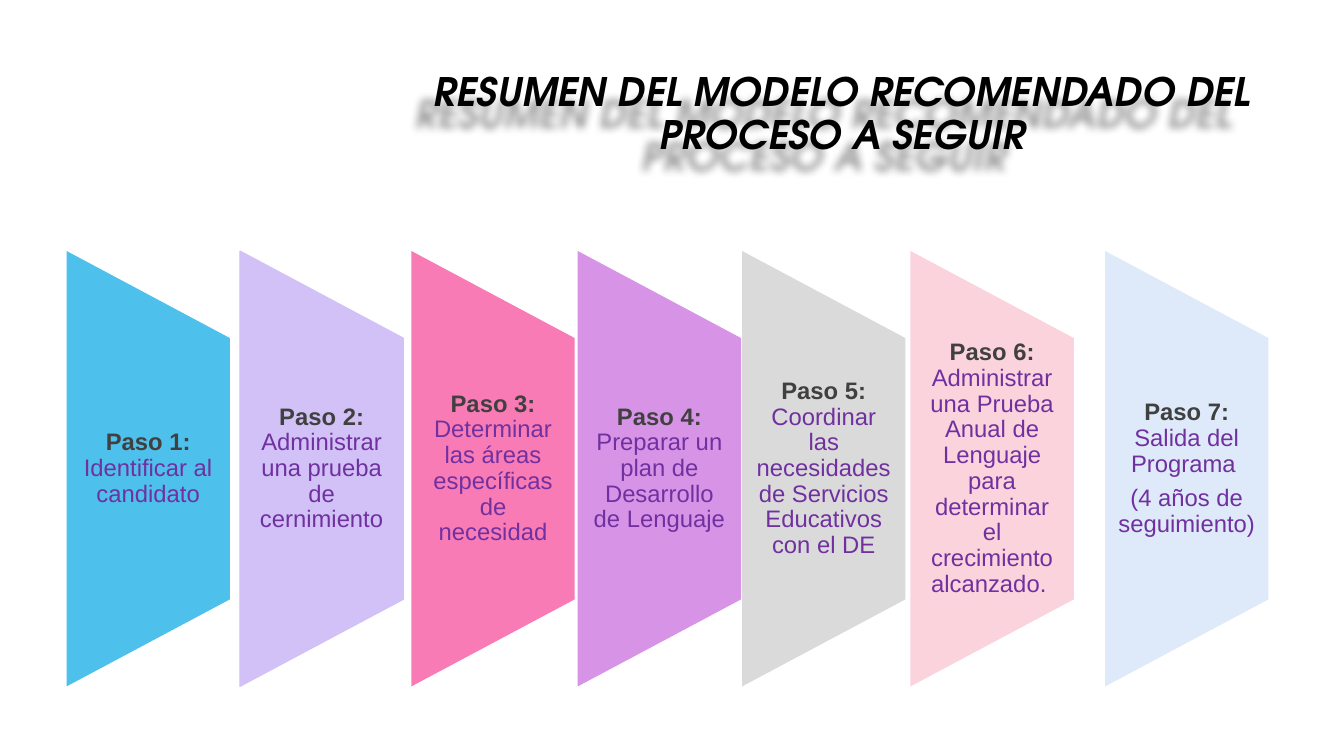
from lxml.etree import SubElement
from pptx import Presentation
from pptx.dml.color import RGBColor
from pptx.enum.shapes import MSO_SHAPE
from pptx.enum.text import MSO_ANCHOR, PP_ALIGN
from pptx.oxml.ns import qn
from pptx.util import Inches, Pt

COLORS = {
    "title": "000000", "label": "404040", "detail": "7030A0",
    "blue": "4EC0EC", "lavender": "D1C1F7", "pink": "F97BB6", "violet": "D794E6",
    "gray": "DADADA", "rose": "FAD3DC", "ice": "DEE9F9",
}
STEP_WIDTH, STEP_HEIGHT = 1.62, 4.32
STEP_MIDDLE = 4.65
TEXT_HEIGHT = 2.59

STEPS = [
    (0.66, "blue", ["Identificar al candidato"]),
    (2.38, "lavender", ["Administrar una prueba de cernimiento"]),
    (4.08, "pink", ["Determinar las áreas específicas de necesidad"]),
    (5.73, "violet", ["Preparar un plan de Desarrollo de Lenguaje"]),
    (7.36, "gray", ["Coordinar las necesidades de Servicios Educativos con el DE"]),
    (9.03, "rose", ["Administrar una Prueba Anual de Lenguaje para determinar "
                    "el crecimiento alcanzado. "]),
    (10.96, "ice", ["Salida del Programa ", "(4 años de seguimiento)"]),
]


class ProcessSlide:
    title_font, step_font = "TeX Gyre Adventor", "Arial"
    title_size, step_size = Pt(28), Pt(17)

    def __init__(self, presentation):
        self.slide = presentation.slides.add_slide(presentation.slide_layouts[6])

    def color(self, name):
        return RGBColor.from_string(COLORS[name])

    def text_box(self, left, top, width, height, side, edge):
        box = self.slide.shapes.add_textbox(
            Inches(left), Inches(top), Inches(width), Inches(height))
        frame = box.text_frame
        frame.word_wrap = True
        frame.vertical_anchor = MSO_ANCHOR.MIDDLE
        frame.margin_left = frame.margin_right = Inches(side)
        frame.margin_top = frame.margin_bottom = Inches(edge)
        return box

    def center(self, paragraph):
        paragraph.alignment = PP_ALIGN.CENTER
        paragraph.line_spacing = 0.9

    def run(self, paragraph, text, font, size, color, bold=False, italic=False):
        run = paragraph.add_run()
        run.text = text
        run.font.name = font
        run.font.size = size
        run.font.bold = bold
        run.font.italic = italic
        run.font.color.rgb = self.color(color)

    def shadow(self, box):
        effects = SubElement(box.element.spPr, qn("a:effectLst"))
        outer = SubElement(effects, qn("a:outerShdw"), blurRad=str(Inches(0.08)),
                           dist=str(Inches(0.28)), dir="8100000", algn="tr", rotWithShape="0")
        black = SubElement(outer, qn("a:srgbClr"), val=COLORS["title"])
        SubElement(black, qn("a:alpha"), val="40000")

    def title(self, text):
        box = self.text_box(3.72, 0.52, 9.27, 1.25, 0.1, 0.05)
        paragraph = box.text_frame.paragraphs[0]
        self.center(paragraph)
        self.run(paragraph, text, self.title_font, self.title_size, "title", True, True)
        self.shadow(box)

    def panel(self, left, color):
        panel = self.slide.shapes.add_shape(
            MSO_SHAPE.FLOWCHART_MANUAL_OPERATION,
            Inches(left + (STEP_WIDTH - STEP_HEIGHT) / 2),
            Inches(STEP_MIDDLE - STEP_WIDTH / 2),
            Inches(STEP_HEIGHT), Inches(STEP_WIDTH))
        panel.rotation = 270
        panel.shadow.inherit = False
        panel.fill.solid()
        panel.fill.fore_color.rgb = self.color(color)
        if color == "lavender":
            panel.line.color.rgb = self.color(color)
            panel.line.width = Pt(0.75)
        else:
            panel.line.fill.background()

    def step(self, number, left, color, details):
        self.panel(left, color)
        frame = self.text_box(left, STEP_MIDDLE - TEXT_HEIGHT / 2,
                              STEP_WIDTH, TEXT_HEIGHT, 0.12, 0).text_frame
        for index, detail in enumerate(details):
            paragraph = frame.add_paragraph() if index else frame.paragraphs[0]
            self.center(paragraph)
            paragraph.space_after = Pt(6)
            if index == 0:
                self.run(paragraph, f"Paso {number}: ", self.step_font,
                         self.step_size, "label", True)
            self.run(paragraph, detail, self.step_font, self.step_size, "detail")


def main():
    presentation = Presentation()
    presentation.slide_width = Inches(13.33)
    presentation.slide_height = Inches(7.5)
    process = ProcessSlide(presentation)
    process.title("RESUMEN DEL MODELO RECOMENDADO DEL PROCESO A SEGUIR")
    for number, (left, color, details) in enumerate(STEPS, 1):
        process.step(number, left, color, details)
    presentation.save("out.pptx")


if __name__ == "__main__":
    main()
